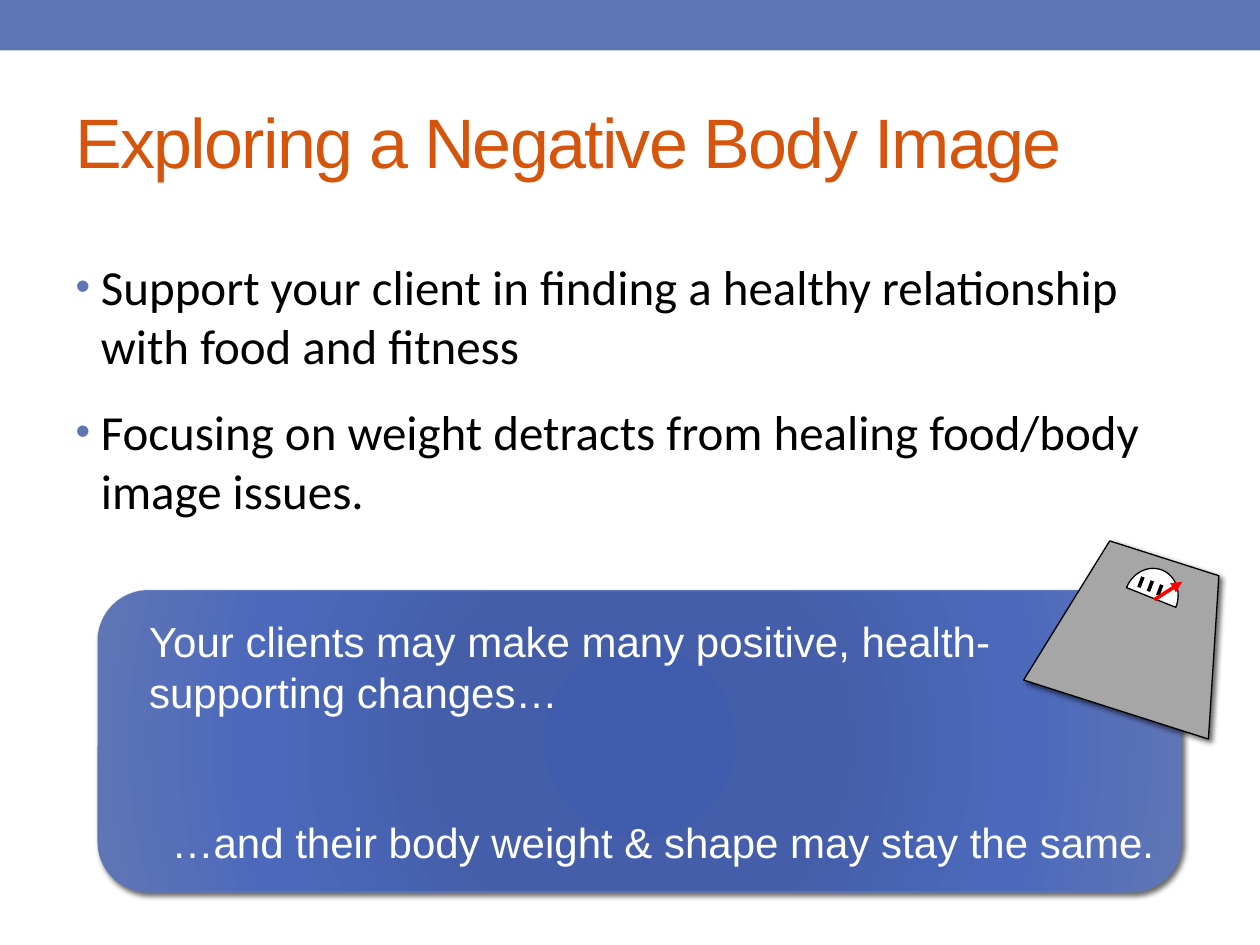
from dataclasses import dataclass

from lxml import etree
from pptx import Presentation
from pptx.dml import color
from pptx.enum import shapes, text
from pptx.oxml import ns, parse_xml
from pptx.util import Cm, Pt

BLUE = "6076B4"
BLACK = "000000"
WHITE = "FFFFFF"
GRADIENT = ((0, "405CAC"), (34, "445EA9"), (70, "4C69BC"), (100, BLUE))
A = ns.nsdecls("a")


@dataclass
class Box:
    left: float
    top: float
    width: float
    height: float


@dataclass
class Stroke:
    x1: float
    y1: float
    x2: float
    y2: float
    hue: str = BLACK


def rgb(value: str) -> color.RGBColor:
    return color.RGBColor.from_string(value)


def place(s, box: Box) -> None:
    s.left, s.top = Cm(box.left), Cm(box.top)
    s.width, s.height = Cm(box.width), Cm(box.height)


def add_shape(slide, kind, box: Box, fill: str, line: str = "", rotation: float = 0):
    s = slide.shapes.add_shape(
        kind, Cm(box.left), Cm(box.top), Cm(box.width), Cm(box.height)
    )
    s.shadow.inherit = False
    s.rotation = rotation
    s.fill.solid()
    s.fill.fore_color.rgb = rgb(fill)
    if line:
        s.line.color.rgb = rgb(line)
        s.line.width = Pt(0.75)
    else:
        s.line.fill.background()
    return s


def add_shadow(s) -> None:
    effects = s._element.spPr.find(ns.qn("a:effectLst"))
    effects.append(parse_xml(
        f'<a:outerShdw {A} blurRad="{Pt(3)}" dist="{Pt(2)}" dir="2700000" '
        f'algn="tl" rotWithShape="0"><a:srgbClr val="{BLACK}">'
        '<a:alpha val="60000"/></a:srgbClr></a:outerShdw>'
    ))


def set_radial_fill(s) -> None:
    stops = "".join(
        f'<a:gs pos="{pos * 1000}"><a:srgbClr val="{hue}"/></a:gs>'
        for pos, hue in GRADIENT
    )
    sp_pr = s._element.spPr
    sp_pr.replace(sp_pr.find(ns.qn("a:solidFill")), parse_xml(
        f'<a:gradFill {A} rotWithShape="1"><a:gsLst>{stops}</a:gsLst>'
        '<a:path path="circle"><a:fillToRect l="100000" t="100000" '
        'r="100000" b="100000"/></a:path></a:gradFill>'
    ))


def add_stroke(slide, stroke: Stroke, arrow: bool = False) -> None:
    c = slide.shapes.add_connector(
        shapes.MSO_CONNECTOR.STRAIGHT,
        Cm(stroke.x1), Cm(stroke.y1), Cm(stroke.x2), Cm(stroke.y2),
    )
    c.line.color.rgb = rgb(stroke.hue)
    c.line.width = Pt(2.08)
    if arrow:
        etree.SubElement(c.line._get_or_add_ln(), ns.qn("a:tailEnd"), type="triangle")
    etree.SubElement(c._element.spPr, ns.qn("a:effectLst"))


def set_font(p, name: str, size: float, hue: str) -> None:
    p.font.name = name
    p.font.size = Pt(size)
    p.font.color.rgb = rgb(hue)


def fill_title(s) -> None:
    place(s, Box(1.27, 1.47, 22.86, 2.74))
    tf = s.text_frame
    tf.text = "Exploring a Negative Body Image"
    tf.vertical_anchor = text.MSO_ANCHOR.MIDDLE
    tf.auto_size = text.MSO_AUTO_SIZE.NONE
    p = tf.paragraphs[0]
    p.alignment = text.PP_ALIGN.LEFT
    set_font(p, "Arial", 40, "D6550D")
    p.runs[0].font._element.set("spc", "-100")


def fill_body(s) -> None:
    place(s, Box(1.27, 5.05, 22.86, 3.99))
    tf = s.text_frame
    tf.text = (
        "Support your client in finding a healthy relationship with food and fitness\n"
        "Focusing on weight detracts from healing food/body image issues."
    )
    tf.auto_size = text.MSO_AUTO_SIZE.NONE
    for p in tf.paragraphs:
        set_font(p, "Calibri", 28, BLACK)
        p.space_before, p.space_after = Pt(5.6), Pt(10)
        p_pr = p._p.get_or_add_pPr()
        p_pr.set("marL", str(Cm(0.51)))
        p_pr.set("indent", str(-Cm(0.51)))
        bullet = (
            f'<a:buClr {A}><a:srgbClr val="{BLUE}"/></a:buClr>',
            f'<a:buSzPct {A} val="85000"/>',
            f'<a:buFont {A} typeface="Arial"/>',
            f'<a:buChar {A} char="•"/>',
        )
        for i, xml in enumerate(bullet, p_pr.index(p_pr.find(ns.qn("a:defRPr")))):
            p_pr.insert(i, parse_xml(xml))


def add_callout(slide) -> None:
    s = add_shape(slide, shapes.MSO_SHAPE.ROUNDED_RECTANGLE,
                  Box(1.98, 11.91, 21.84, 6.07), BLUE, BLUE)
    set_radial_fill(s)
    add_shadow(s)
    tf = s.text_frame
    tf.word_wrap = True
    tf.vertical_anchor = text.MSO_ANCHOR.MIDDLE
    tf.text = (
        "Your clients may make many positive, health-supporting changes…\n"
        "…and their body weight & shape may stay the same."
    )
    first, last = tf.paragraphs
    for p in (first, last):
        set_font(p, "Arial", 24, WHITE)
    first.alignment = text.PP_ALIGN.LEFT
    first._p.get_or_add_pPr().set("marL", str(Cm(0.48)))
    last.alignment = text.PP_ALIGN.RIGHT
    last.space_before = Pt(57)


def add_scale(slide) -> None:
    base = add_shape(slide, shapes.MSO_SHAPE.TRAPEZOID,
                     Box(21.03, 11.18, 3.91, 3.2), "A6A6A6", BLACK, 17.7)
    add_shadow(base)
    dial = add_shape(slide, shapes.MSO_SHAPE.CHORD,
                     Box(22.61, 11.51, 1.19, 1.07), WHITE, BLACK, 111.9)
    dial.adjustments[0] = 53.904
    dial.adjustments[1] = 162
    for i in range(3):
        x, y = 23.04 + 0.19 * i, 11.63 + 0.08 * i
        add_stroke(slide, Stroke(x, y, x - 0.08, y + 0.21))
    add_stroke(slide, Stroke(23.27, 12.09, 23.83, 11.73, "FF0000"), arrow=True)


def main() -> None:
    prs = Presentation()
    prs.slide_width, prs.slide_height = Cm(25.4), Cm(19.05)
    slide = prs.slides.add_slide(prs.slide_layouts[1])
    add_shape(slide, shapes.MSO_SHAPE.RECTANGLE, Box(0, 0, 25.4, 1.02), BLUE)
    fill_title(slide.shapes.title)
    fill_body(slide.placeholders[1])
    add_callout(slide)
    add_scale(slide)
    prs.save("out.pptx")


if __name__ == "__main__":
    main()
